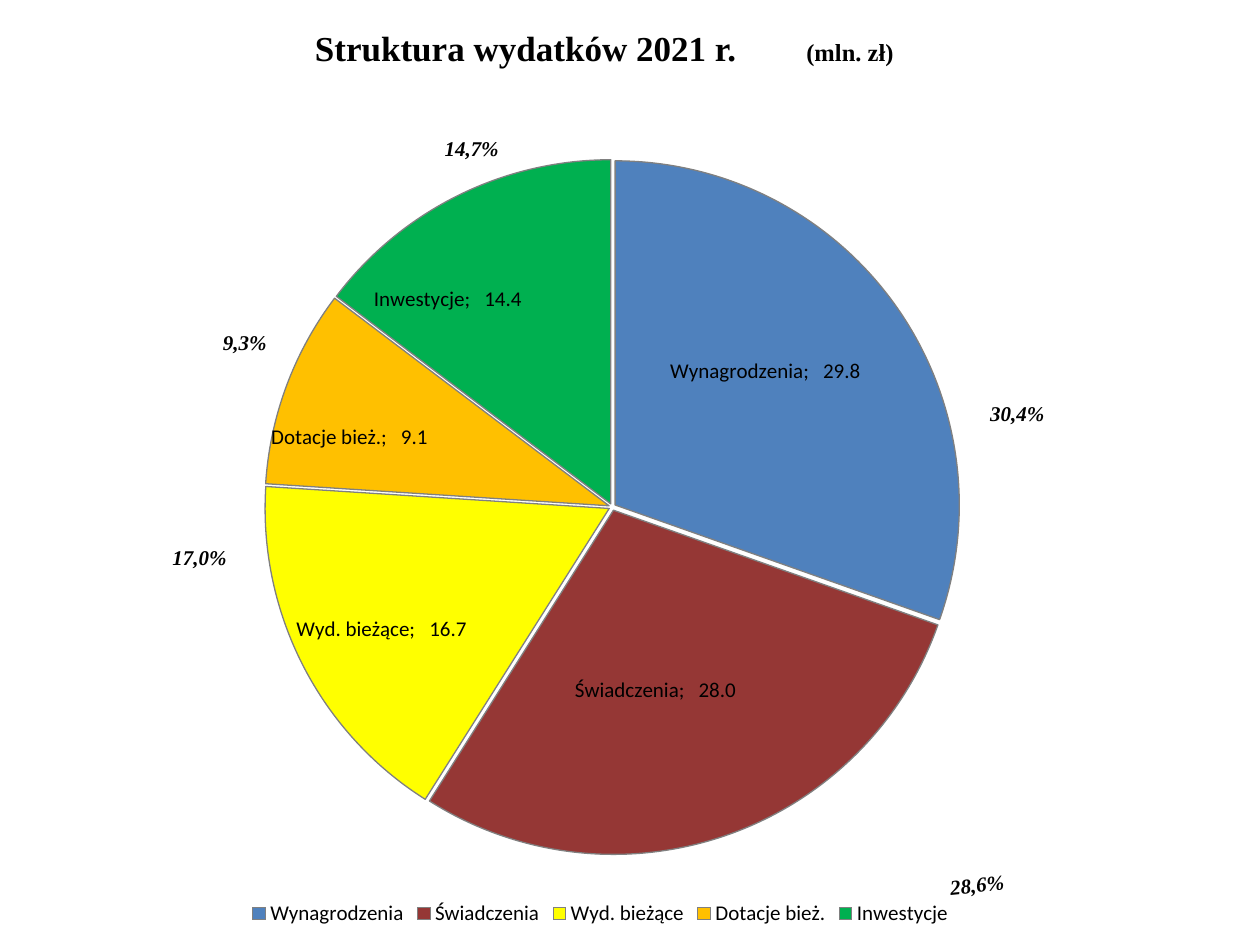
from copy import deepcopy

from pptx import Presentation
from pptx.chart.data import CategoryChartData
from pptx.dml.color import RGBColor
from pptx.enum.chart import XL_CHART_TYPE, XL_LABEL_POSITION, XL_LEGEND_POSITION
from pptx.enum.text import MSO_AUTO_SIZE
from pptx.oxml import parse_xml
from pptx.oxml.ns import nsdecls, qn
from pptx.util import Inches, Pt

PIE, CENTER, BOTTOM = XL_CHART_TYPE.PIE, XL_LABEL_POSITION.CENTER, XL_LEGEND_POSITION.BOTTOM
GROW = MSO_AUTO_SIZE.SHAPE_TO_FIT_TEXT
WIDTH, HEIGHT = Inches(10), Inches(7.5)
COLORS = {"text": "000000", "outline": "808080", "pay": "4F81BD", "benefits": "953735",
          "current": "FFFF00", "grants": "FFC000", "investment": "00B050"}
AMOUNT_FORMAT = r"_-* #\ ##0.0\ _z_ł_-;\-* #\ ##0.0\ _z_ł_-"

# Category, amount, colour, label shift as shares of the chart
EXPENSES = [
    ("Wynagrodzenia", 29.8, "pay", (0.02, -0.04)),
    ("Świadczenia", 28.0, "benefits", (0, 0.02)),
    ("Wyd. bieżące", 16.7, "current", (-0.05, 0.05)),
    ("Dotacje bież.", 9.1, "grants", (-0.07, -0.01)),
    ("Inwestycje", 14.4, "investment", (-0.06, -0.06)),
]
# Text, left and top in inches, rotation
PERCENTAGES = [
    ("30,4%", 7.76, 3.13, 0),
    ("28,6%", 7.44, 6.86, -5.8),
    ("17,0%", 1.27, 4.27, 0),
    ("9,3%", 1.67, 2.57, 0),
    ("14,7%", 3.43, 1.03, 0),
]


def color(name):
    return RGBColor.from_string(COLORS[name])


def element(tag, inner="", **attributes):
    values = "".join(f' {key}="{value}"' for key, value in attributes.items())
    return parse_xml(f"<{tag} {nsdecls('a', 'c')}{values}>{inner}</{tag}>")


def layout(**parts):
    inner = "".join(f'<c:{key} val="{value}"/>' for key, value in parts.items())
    return element("c:layout", f"<c:manualLayout>{inner}</c:manualLayout>")


class ExpenseSlide:
    serif = {"name": "Times New Roman", "bold": True}
    sans = {"name": "Calibri", "bold": False}

    def __init__(self, presentation):
        self.slide = presentation.slides.add_slide(presentation.slide_layouts[6])

    def place(self, left, top, width, height):
        """Turn shares of the slide into lengths."""
        return [round(share * side) for share, side in
                zip((left, top, width, height), (WIDTH, HEIGHT, WIDTH, HEIGHT))]

    def style(self, font, **values):
        for key, value in values.items():
            setattr(font, key, value)
        font.color.rgb = color("text")

    def text(self, area, runs, rotation=0, **frame_values):
        box = self.slide.shapes.add_textbox(*self.place(*area))
        box.rotation = rotation
        frame = box.text_frame
        for key, value in {"word_wrap": True, **frame_values}.items():
            setattr(frame, key, value)
        paragraph = frame.paragraphs[0]
        for words, values in runs:
            run = paragraph.add_run()
            run.text = words
            self.style(run.font, **self.serif, **values)
        return paragraph

    def title(self):
        heading = self.text((0.13, 0.13 / 7.5, 0.7, 0.53 / 7.5),
                            [("Struktura wydatków 2021 r.\t", {"size": Pt(20)}),
                             ("(mln. zł)", {"size": Pt(14)})],
                            margin_left=Inches(1.2), margin_top=Inches(0.08))
        heading._p.get_or_add_pPr().append(
            element("a:tabLst", f'<a:tab pos="{Inches(3.9)}" algn="l"/>'))

    def percentage(self, words, left, top, rotation):
        self.text((left / 10, top / 7.5, 0.079, 0.04),
                  [(words, {"size": Pt(12), "italic": True})], rotation, auto_size=GROW)

    def pie(self):
        data = CategoryChartData(number_format="0.0")
        data.categories = [expense[0] for expense in EXPENSES]
        data.add_series("Series 1", [expense[1] for expense in EXPENSES])
        area = self.place(0, 0.66 / 7.5, 0.953, 6.73 / 7.5)
        chart = self.slide.shapes.add_chart(PIE, *area, data).chart
        self.style(chart.font, size=Pt(18), **self.sans)
        chart.has_title = False
        chart.has_legend = True
        chart.legend.position = BOTTOM
        chart.legend.include_in_layout = False
        self.style(chart.legend.font, size=Pt(12), **self.sans)

        # Fixed plot area
        plot_area = chart._chartSpace.chart.plotArea
        for automatic in plot_area.findall(qn("c:layout")):
            plot_area.remove(automatic)
        plot_area.insert(0, layout(layoutTarget="inner", xMode="edge", yMode="edge",
                                   x=0.22, y=0.09, w=0.58, h=0.82))

        # Slices, slightly pulled apart
        chart.plots[0].vary_by_categories = True
        series = chart.plots[0].series[0]
        slices = [series.format] + [series.points[i].format for i in range(len(EXPENSES))]
        for slice_format in slices:
            slice_format.line.color.rgb = color("outline")
            slice_format.line.width = Pt(0.75)
        for slice_format, (_, _, shade, _) in zip(slices[1:], EXPENSES):
            slice_format.fill.solid()
            slice_format.fill.fore_color.rgb = color(shade)
        series._element.find(qn("c:spPr")).addnext(element("c:explosion", val=1))
        self.slice_labels(series)

    def slice_labels(self, series):
        labels = series.data_labels
        for key, value in {"show_category_name": True, "show_value": True,
                           "show_percentage": False, "position": CENTER,
                           "number_format": AMOUNT_FORMAT,
                           "number_format_is_linked": False}.items():
            setattr(labels, key, value)
        self.style(labels.font, size=Pt(12), **self.sans)
        group = labels._element
        leader = qn("c:showLeaderLines")
        shared = [part for part in group if part.tag != leader]
        separator = element("c:separator", "; ")
        shared[-1].addnext(separator)
        shared.append(separator)
        for index, (_, _, _, (x, y)) in enumerate(EXPENSES):
            label = element("c:dLbl", f'<c:idx val="{index}"/>')
            label.append(layout(x=x, y=y))
            label.extend(deepcopy(shared))
            group.insert(index, label)


def main():
    presentation = Presentation()
    presentation.slide_width, presentation.slide_height = WIDTH, HEIGHT
    expenses = ExpenseSlide(presentation)
    expenses.title()
    expenses.pie()
    for percentage in PERCENTAGES:
        expenses.percentage(*percentage)
    presentation.save("out.pptx")


if __name__ == "__main__":
    main()
